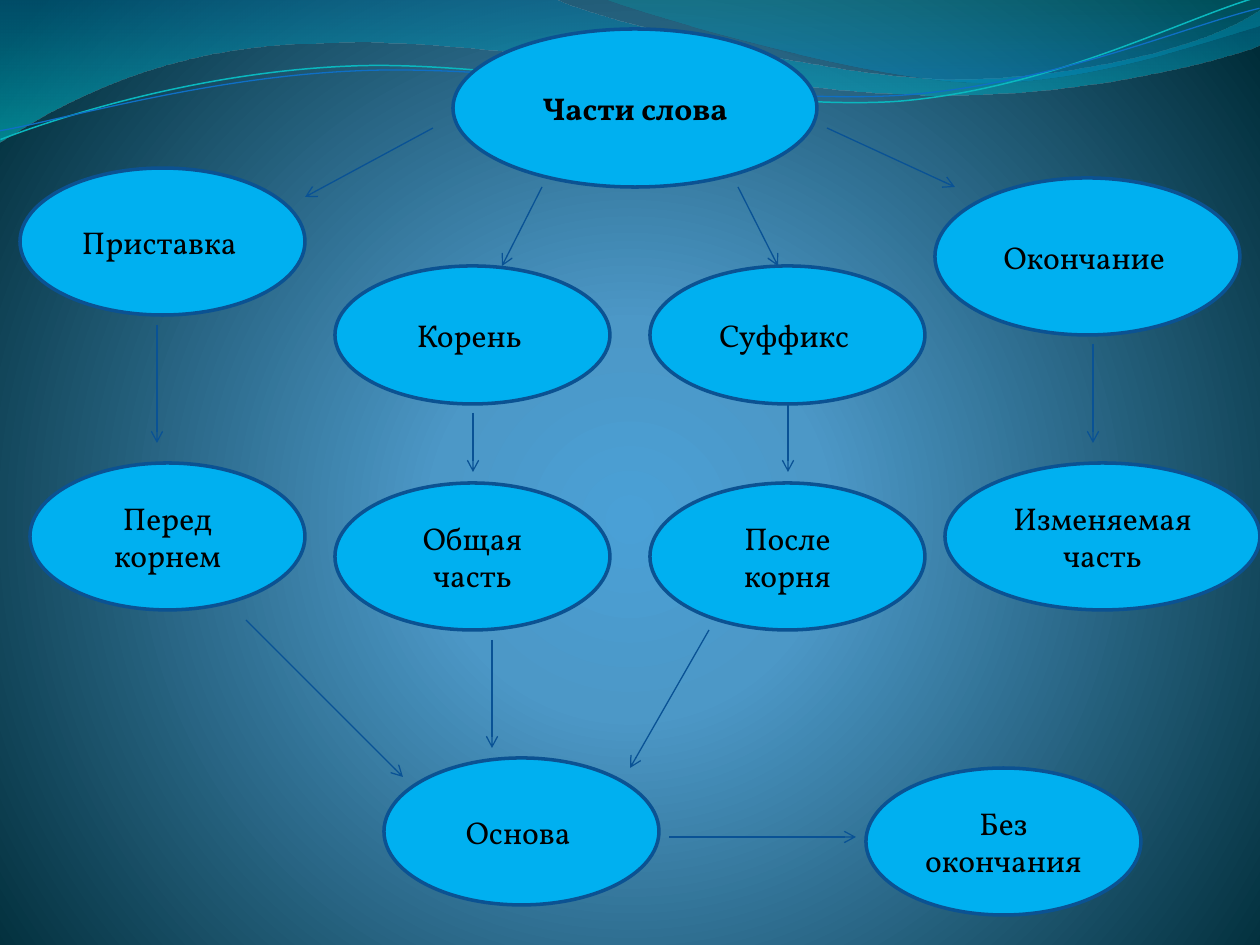
"""Build a slide with a diagram of the parts of a word in Russian."""
from lxml import etree
from pptx import Presentation
from pptx.dml.color import RGBColor
from pptx.enum.shapes import MSO_CONNECTOR, MSO_SHAPE
from pptx.enum.text import MSO_ANCHOR, PP_ALIGN
from pptx.oxml import parse_xml
from pptx.oxml.ns import nsdecls, qn
from pptx.util import Emu, Pt

ELLIPSE = MSO_SHAPE.OVAL
STRAIGHT = MSO_CONNECTOR.STRAIGHT
MIDDLE = MSO_ANCHOR.MIDDLE
CENTER = PP_ALIGN.CENTER

EMU_PER_PX = 914400 / 126
SLIDE_SIZE = (1260, 945)
STRAND_ROTATION = 357.3
FONT = "Vollkorn"

SKY = RGBColor(0x00, 0xB0, 0xF0)
OUTLINE = RGBColor(0x0B, 0x52, 0x92)
ARROW = RGBColor(0x09, 0x52, 0x95)
BLACK = RGBColor(0x00, 0x00, 0x00)
TEAL = RGBColor(0x0A, 0xB8, 0xBF)
BLUE = RGBColor(0x0F, 0x6F, 0xC6)

BACKGROUND_STOPS = [
    (0, RGBColor(0x4A, 0xA0, 0xD6), 100),
    (25, RGBColor(0x4C, 0x98, 0xC7), 100),
    (100, RGBColor(0x00, 0x2C, 0x38), 100),
]
BACKGROUND_DIRECTION = (
    '<a:path path="circle">'
    '<a:fillToRect l="10000" t="110000" r="10000" b="100000"/></a:path>'
)
WAVE_DIRECTION = '<a:lin ang="5400000" scaled="0"/>'

WAVES = [
    (
        (0, -1),
        [
            [(554, -1)],
            [(600, 21), (837, 79), (955, 79)],
            [(1075, 79), (1207, 47), (1260, 11)],
            [(1261, 45)],
            [(1239, 55), (1096, 96), (940, 95)],
            [(784, 95), (481, 35), (324, 43)],
            [(163, 44), (58, 105), (-1, 142)],
            [(0, -1)],
        ],
        [(0, RGBColor(0x00, 0x74, 0xA1), 45), (100, RGBColor(0x00, 0xC6, 0xCF), 55)],
    ),
    (
        (604, -1),
        [
            [(641, 14), (859, 78), (969, 82)],
            [(1079, 87), (1211, 40), (1260, 26)],
            [(1260, 0)],
            [(604, -1)],
        ],
        [(0, RGBColor(0x00, 0xA1, 0xA9), 30), (80, RGBColor(0x00, 0x8B, 0xBF), 45)],
    ),
]

STRANDS = [
    (
        (-2, 110),
        [
            [(58, 90), (199, 52), (350, 53)],
            [(499, 53), (745, 117), (896, 114)],
            [(1049, 109), (1184, 45), (1260, 27)],
        ],
        TEAL,
        0.85,
    ),
    (
        (-2, 101),
        [
            [(57, 94), (207, 57), (358, 58)],
            [(509, 58), (750, 111), (902, 108)],
            [(1052, 104), (1188, 52), (1262, 38)],
        ],
        BLUE,
        0.75,
    ),
]

TITLE = "Части слова"
NODES = [
    ("Окончание ", 935, 178, 305, 157),
    ("Суффикс ", 650, 266, 275, 138),
    ("Корень ", 335, 266, 275, 138),
    ("Приставка ", 20, 168, 285, 147),
    (TITLE, 453, 29, 364, 158),
    ("Перед корнем", 30, 463, 275, 147),
    ("Общая часть", 335, 483, 275, 147),
    ("После корня", 650, 483, 275, 147),
    ("Изменяемая часть", 945, 463, 315, 147),
    ("Основа ", 384, 758, 275, 147),
    ("Без окончания", 866, 768, 275, 147),
]

ARROWS = [
    (157, 325, 157, 443),
    (433, 128, 305, 197),
    (473, 413, 473, 472),
    (788, 404, 788, 472),
    (1093, 344, 1093, 443),
    (246, 620, 403, 777),
    (492, 640, 492, 748),
    (709, 630, 630, 768),
    (669, 837, 856, 837),
    (827, 128, 955, 187),
    (542, 187, 502, 266),
    (738, 187, 778, 266),
]


def px(value):
    return Emu(round(value * EMU_PER_PX))


def set_gradient(fill, parent, stops, direction):
    fill.gradient()
    stop_xml = "".join(
        f'<a:gs pos="{position * 1000}"><a:srgbClr val="{color}">'
        f'<a:alpha val="{opacity * 1000}"/></a:srgbClr></a:gs>'
        for position, color, opacity in stops
    )
    gradient = parse_xml(
        f'<a:gradFill {nsdecls("a")} rotWithShape="1">'
        f"<a:gsLst>{stop_xml}</a:gsLst>{direction}</a:gradFill>"
    )
    parent.replace(parent.find(qn("a:gradFill")), gradient)


def add_outline(slide, start, segments, close):
    points = [(px(x), px(y)) for segment in segments for x, y in segment]
    builder = slide.shapes.build_freeform(*map(px, start), scale=1.0)
    builder.add_line_segments(points, close=close)
    shape = builder.convert_to_shape()
    shape.shadow.inherit = False
    lines = iter(shape._element.findall(".//" + qn("a:lnTo")))
    for segment in segments:
        parts = [next(lines) for _ in segment]
        if len(parts) == 3:
            curve = etree.Element(qn("a:cubicBezTo"))
            parts[0].addprevious(curve)
            for part in parts:
                curve.append(part[0])
                part.getparent().remove(part)
    return shape


def add_node(slide, text, *box):
    shape = slide.shapes.add_shape(ELLIPSE, *map(px, box))
    shape.shadow.inherit = False
    shape.fill.solid()
    shape.fill.fore_color.rgb = SKY
    shape.line.color.rgb = OUTLINE
    shape.line.width = Pt(2)
    text_frame = shape.text_frame
    text_frame.text = text
    text_frame.word_wrap = True
    text_frame.vertical_anchor = MIDDLE
    paragraph = text_frame.paragraphs[0]
    paragraph.alignment = CENTER
    font = paragraph.runs[0].font
    font.name = FONT
    font.size = Pt(18)
    font.bold = text == TITLE
    font.color.rgb = BLACK


def add_arrow(slide, *ends):
    connector = slide.shapes.add_connector(STRAIGHT, *map(px, ends))
    connector.line.color.rgb = ARROW
    connector.line.width = Pt(0.75)
    properties = connector._element.spPr
    etree.SubElement(properties.find(qn("a:ln")), qn("a:tailEnd"), type="arrow")
    etree.SubElement(properties, qn("a:effectLst"))


def main():
    presentation = Presentation()
    presentation.slide_width, presentation.slide_height = map(px, SLIDE_SIZE)
    slide = presentation.slides.add_slide(presentation.slide_layouts[6])
    fill = slide.background.fill
    background = slide._element.find(".//" + qn("p:bgPr"))
    set_gradient(fill, background, BACKGROUND_STOPS, BACKGROUND_DIRECTION)
    for start, segments, stops in WAVES:
        wave = add_outline(slide, start, segments, True)
        set_gradient(wave.fill, wave._element.spPr, stops, WAVE_DIRECTION)
        wave.line.fill.background()
    for start, segments, color, width in STRANDS:
        strand = add_outline(slide, start, segments, False)
        strand.rotation = STRAND_ROTATION
        strand.fill.background()
        strand.line.color.rgb = color
        strand.line.width = Pt(width)
    for node in NODES:
        add_node(slide, *node)
    for arrow in ARROWS:
        add_arrow(slide, *arrow)
    presentation.save("out.pptx")


if __name__ == "__main__":
    main()
